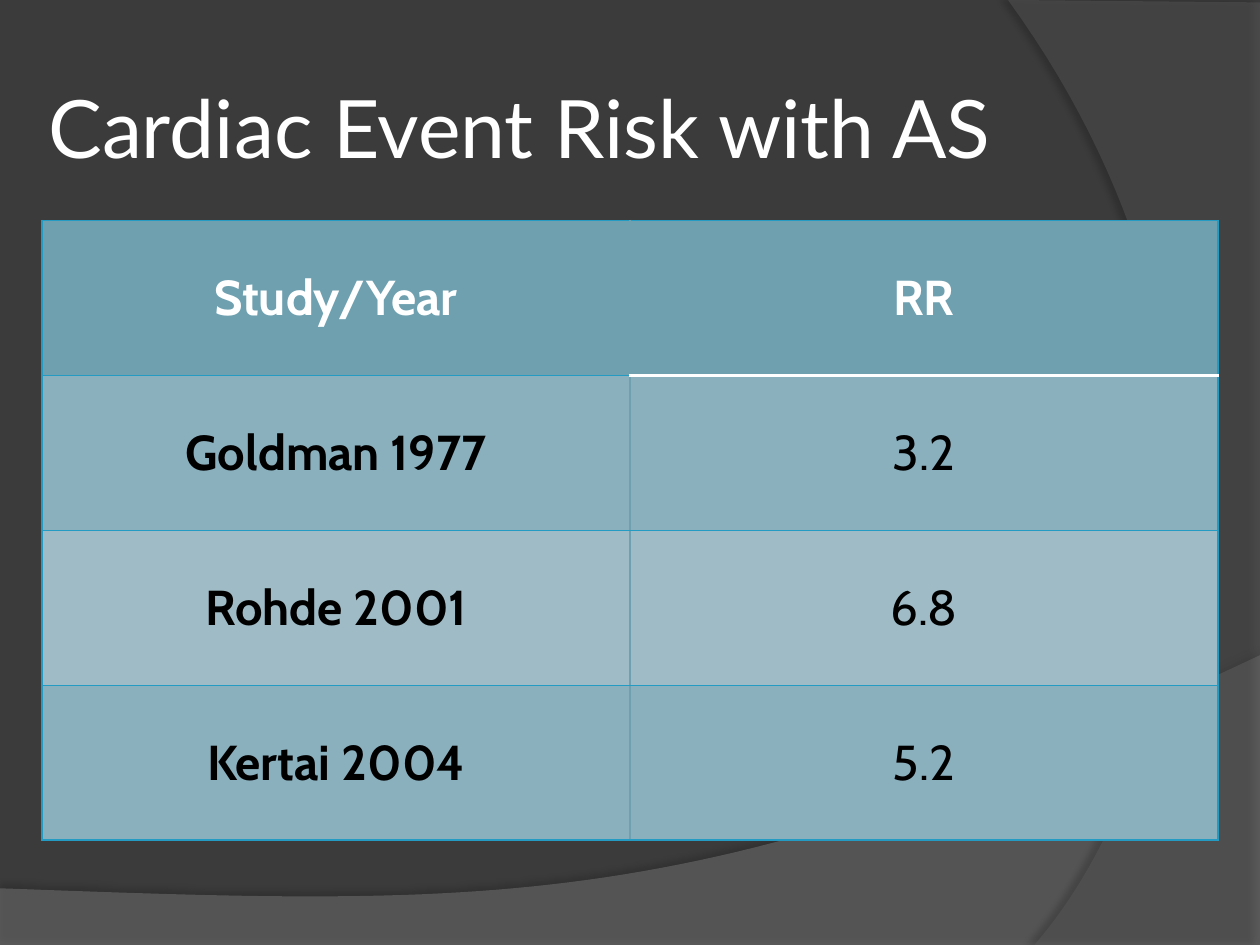
from lxml import etree
from pptx import Presentation
from pptx import util as u
from pptx.dml.color import RGBColor
from pptx.enum import text
from pptx.oxml.ns import qn

COLORS = {
    "background": "3B3B3B",
    "lower_wave": "7F7F7F",
    "right_wave": "5E5E5E",
    "shadow": "000000",
    "white": "FFFFFF",
    "black": "000000",
    "header": "6EA0B0",
    "dark_band": "8AAFBD",
    "light_band": "9FBBC5",
    "border": "239BC2",
    "divider": "6EA0B0",
}
ROWS = [
    ("Study/Year", "RR"),
    ("Goldman 1977", "3.2"),
    ("Rohde 2001", "6.8"),
    ("Kertai 2004", "5.2"),
]


def add_color(parent, name, alpha=None):
    color = etree.SubElement(parent, qn("a:srgbClr"), val=COLORS[name])
    if alpha is not None:
        etree.SubElement(color, qn("a:alpha"), val=str(alpha * 1000))


def bezier(start, control_1, control_2, end, steps=60):
    """Return the points of a cubic curve, leaving out its start."""
    points = []
    for step in range(1, steps + 1):
        t = step / steps
        weights = ((1 - t) ** 3, 3 * t * (1 - t) ** 2, 3 * t * t * (1 - t), t ** 3)
        corners = (start, control_1, control_2, end)
        points.append(tuple(sum(w * c[axis] for w, c in zip(weights, corners))
                            for axis in (0, 1)))
    return points


class SlideBuilder:
    def __init__(self, slide):
        self.slide = slide
        self.title_font = "Lato"
        self.table_font = "Cabin"

    def color(self, name):
        return RGBColor.from_string(COLORS[name])

    def background(self, name):
        fill = self.slide.background.fill
        fill.solid()
        fill.fore_color.rgb = self.color(name)

    def wave(self, points, name, alpha, shadow_alpha, distance, direction):
        """Draw a translucent outline with a soft shadow; direction is in degrees."""
        points = [(u.Pt(x), u.Pt(y)) for x, y in points]
        builder = self.slide.shapes.build_freeform(*points[0])
        builder.add_line_segments(points[1:], close=True)
        shape = builder.convert_to_shape()
        shape.fill.solid()
        shape.fill.fore_color.rgb = self.color(name)
        fill_color = shape._element.spPr.find(".//" + qn("a:srgbClr"))
        etree.SubElement(fill_color, qn("a:alpha"), val=str(alpha * 1000))
        shape.line.fill.background()
        shape.shadow.inherit = False
        effects = shape._element.spPr.find(qn("a:effectLst"))
        shadow = etree.SubElement(
            effects, qn("a:outerShdw"), blurRad=str(u.Pt(4)), dist=str(u.Pt(distance)),
            dir=str(direction * 60000), algn="ctr", rotWithShape="0")
        add_color(shadow, "shadow", shadow_alpha)

    def style(self, paragraph, font, size, color, bold=False):
        paragraph.font.name = font
        paragraph.font.size = u.Pt(size)
        paragraph.font.bold = bold
        paragraph.font.color.rgb = self.color(color)

    def title(self, words, left, top, width, height):
        box = self.slide.shapes.add_textbox(*map(u.Pt, (left, top, width, height)))
        frame = box.text_frame
        frame.word_wrap = True
        frame.vertical_anchor = text.MSO_ANCHOR.MIDDLE
        frame.margin_left = frame.margin_right = u.Pt(3.6)
        frame.margin_top = frame.margin_bottom = u.Pt(3.6)
        frame.text = words
        self.style(frame.paragraphs[0], self.title_font, 46, "white")

    def borders(self, cell, sides):
        properties = cell._tc.get_or_add_tcPr()
        for index, side in enumerate("LRTB"):
            name, width = sides[side]
            line = etree.Element(qn("a:ln" + side), w=str(u.Pt(width)))
            add_color(etree.SubElement(line, qn("a:solidFill")), name)
            properties.insert(index, line)

    def table(self, rows, left, top, width, height):
        frame = self.slide.shapes.add_table(
            len(rows), len(rows[0]), *map(u.Pt, (left, top, width, height)))
        thin, divider, rule = ("border", 0.75), ("divider", 1.5), ("white", 1.5)
        for r, row in enumerate(rows):
            for c, words in enumerate(row):
                cell = frame.table.cell(r, c)
                cell.text = words
                cell.vertical_anchor = text.MSO_ANCHOR.MIDDLE
                cell.fill.solid()
                band = "header" if r == 0 else "dark_band" if r % 2 else "light_band"
                cell.fill.fore_color.rgb = self.color(band)
                paragraph = cell.text_frame.paragraphs[0]
                paragraph.alignment = text.PP_ALIGN.CENTER
                paragraph.space_before = u.Pt(5.6)
                self.style(paragraph, self.table_font, 28,
                           "black" if r else "white", r == 0 or c == 0)
                self.borders(cell, {
                    "L": divider if c else thin,
                    "R": thin if c else divider,
                    "T": rule if (r, c) == (1, 1) else thin,
                    "B": rule if (r, c) == (0, 1) else thin,
                })


def main():
    presentation = Presentation()
    presentation.slide_width, presentation.slide_height = u.Pt(720), u.Pt(540)
    builder = SlideBuilder(presentation.slides.add_slide(presentation.slide_layouts[6]))
    builder.background("background")
    lower_curve = bezier((720, 374.4), (402.5, 524.9), (281.5, 517.7), (0, 507.6))
    builder.wave([(0, 507.6), (0, 540.7), (720, 540.7), (720, 374.4)] + lower_curve[:-1],
                 "lower_wave", 45, 35, 3.5, 270)
    right_curve = bezier((591.1, 540), (673.2, 445.7), (733, 216), (576, 0))
    builder.wave([(720, 1.4), (720, 540), (591.1, 540)] + right_curve,
                 "right_wave", 40, 45, 4, 180)
    builder.title("Cardiac Event Risk with AS", 24, 18, 672, 108)
    builder.table(ROWS, 24, 126, 672, 354)
    presentation.save("out.pptx")


if __name__ == "__main__":
    main()
